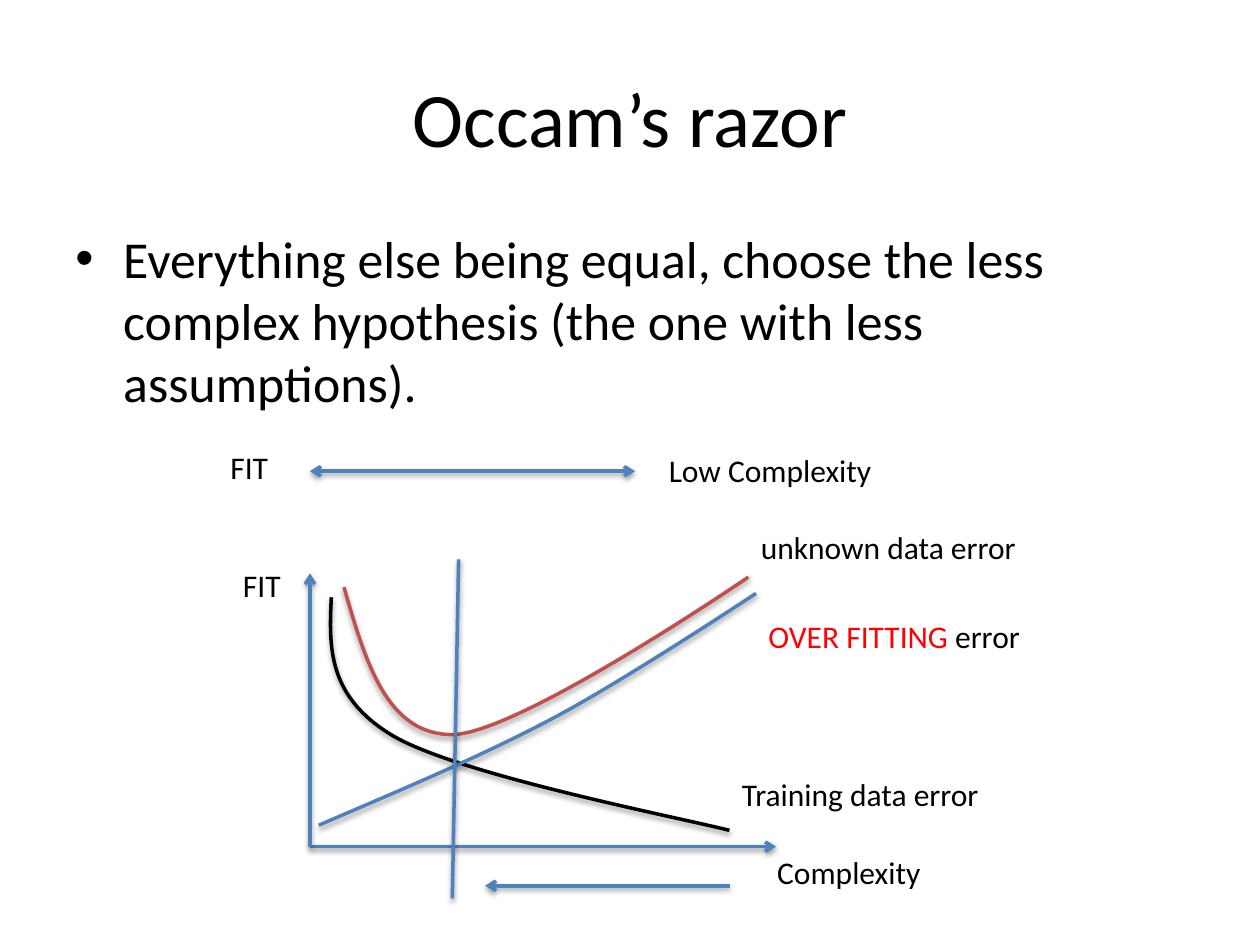
from dataclasses import dataclass

from lxml import etree
from pptx import Presentation
from pptx.dml.color import RGBColor
from pptx.enum.shapes import MSO_CONNECTOR
from pptx.enum.text import MSO_ANCHOR, MSO_AUTO_SIZE, PP_ALIGN
from pptx.oxml.ns import qn
from pptx.util import Inches, Pt

STRAIGHT = MSO_CONNECTOR.STRAIGHT
LEFT, CENTER = PP_ALIGN.LEFT, PP_ALIGN.CENTER
TOP, MIDDLE = MSO_ANCHOR.TOP, MSO_ANCHOR.MIDDLE
FIXED, GROW = MSO_AUTO_SIZE.NONE, MSO_AUTO_SIZE.SHAPE_TO_FIT_TEXT
FONT = "Calibri"
TITLE_ONLY = 5
COLORS = {"black": "000000", "blue": "4F81BD", "brick": "C0504D", "red": "FF0000"}

Point = tuple[float, float]


@dataclass(frozen=True)
class Label:
    left: float
    top: float
    width: float
    runs: tuple[tuple[str, str], ...]


@dataclass(frozen=True)
class Ruler:
    start: Point
    end: Point
    arrows: tuple[str, ...] = ("tailEnd",)


@dataclass(frozen=True)
class Curve:
    color: str
    start: Point
    segments: tuple[tuple[Point, Point, Point], ...]


ORIGIN = (2.46, 6.72)
DIAGRAM = (
    Label(1.73, 3.51, 0.51, (("FIT", "black"),)),
    Ruler((2.46, 3.74), (5.04, 3.74), ("headEnd", "tailEnd")),
    Label(5.21, 3.53, 1.83, (("Low Complexity", "black"),)),
    Ruler(ORIGIN, (6.16, 6.72)),
    Ruler(ORIGIN, (2.46, 4.55)),
    Label(6.07, 6.72, 1.35, (("Complexity", "black"),)),
    Label(1.83, 4.44, 0.51, (("FIT", "black"),)),
    Curve("black", (2.63, 4.74), (
        ((2.61, 5.14), (2.6, 5.53), (3.12, 5.84)),
        ((3.65, 6.15), (5.35, 6.48), (5.79, 6.59)),
    )),
    Curve("brick", (2.73, 4.66), (
        ((2.9, 5.25), (3.07, 5.84), (3.6, 5.83)),
        ((4.14, 5.81), (5.94, 4.58), (5.94, 4.58)),
    )),
    Label(5.79, 6.1, 2.13, (("Training data error", "black"),)),
    Label(5.94, 4.14, 2.26, (("unknown data error", "black"),)),
    Curve("blue", (2.53, 6.55), (
        ((3.18, 6.27), (3.83, 6), (4.41, 5.69)),
        ((4.99, 5.38), (6, 4.71), (6, 4.71)),
    )),
    Label(6, 4.85, 2.22, (("OVER FITTING", "red"), (" error", "black"))),
    Ruler((3.64, 4.44), (3.59, 7.13), ()),
    Ruler((5.79, 7.03), (3.85, 7.03)),
)


def write_text(frame, runs, *, size=18, align=LEFT, anchor=TOP,
               wrap=True, fit=FIXED) -> None:
    """Fill the frame's first paragraph with coloured runs."""
    frame.word_wrap = wrap
    frame.auto_size = fit
    frame.vertical_anchor = anchor
    paragraph = frame.paragraphs[0]
    paragraph.alignment = align
    for text, color in runs:
        run = paragraph.add_run()
        run.text = text
        run.font.name = FONT
        run.font.size = Pt(size)
        run.font.color.rgb = RGBColor.from_string(COLORS[color])


def place(shape, left: float, top: float, width: float, height: float) -> None:
    """Position and size a shape in inches."""
    shape.left, shape.top = Inches(left), Inches(top)
    shape.width, shape.height = Inches(width), Inches(height)


def add_bullet(paragraph) -> None:
    """Give the paragraph a hanging round bullet."""
    paragraph.space_before = Pt(6)
    properties = paragraph._p.get_or_add_pPr()
    properties.set("marL", str(Inches(0.38)))
    properties.set("indent", str(-Inches(0.38)))
    etree.SubElement(properties, qn("a:buFont"), typeface="Arial")
    etree.SubElement(properties, qn("a:buChar"), char="•")


def style_stroke(shape, color: str, arrows: tuple[str, ...] = ()) -> None:
    """Apply line colour, arrowheads and the soft drop shadow."""
    shape.line.width = Pt(2)
    shape.line.color.rgb = RGBColor.from_string(COLORS[color])
    stroke = shape.line._get_or_add_ln()
    for arrow in arrows:
        etree.SubElement(stroke, qn(f"a:{arrow}"), type="arrow")
    effects = etree.SubElement(shape._element.spPr, qn("a:effectLst"))
    shadow = etree.SubElement(
        effects, qn("a:outerShdw"), blurRad=str(Pt(3.1)), dist=str(Pt(1.6)),
        dir="5400000", rotWithShape="0",
    )
    tint = etree.SubElement(shadow, qn("a:srgbClr"), val=COLORS["black"])
    etree.SubElement(tint, qn("a:alpha"), val="38000")


def draw_ruler(slide, ruler: Ruler) -> None:
    """Draw one straight line of the diagram."""
    ends = [Inches(value) for value in (*ruler.start, *ruler.end)]
    style_stroke(slide.shapes.add_connector(STRAIGHT, *ends), "blue", ruler.arrows)


def draw_curve(slide, curve: Curve) -> None:
    """Draw one error curve as an open outline of cubic segments."""
    builder = slide.shapes.build_freeform(*(Inches(value) for value in curve.start))
    knots = [tuple(Inches(value) for value in segment[-1]) for segment in curve.segments]
    builder.add_line_segments(knots, close=False)
    outline = builder.convert_to_shape()
    sides = list(outline._element.iter(qn("a:lnTo")))
    for side, segment in zip(sides, curve.segments):
        cubic = etree.Element(qn("a:cubicBezTo"))
        for x, y in segment:
            etree.SubElement(cubic, qn("a:pt"), x=str(Inches(x) - outline.left),
                             y=str(Inches(y) - outline.top))
        side.getparent().replace(side, cubic)
    outline.fill.background()
    style_stroke(outline, curve.color)


def draw_label(slide, label: Label) -> None:
    """Draw one unwrapped caption."""
    caption = slide.shapes.add_textbox(0, 0, 0, 0)
    place(caption, label.left, label.top, label.width, 0.4)
    write_text(caption.text_frame, label.runs, wrap=False, fit=GROW)


def main() -> None:
    """Build the slide and save it."""
    deck = Presentation()
    deck.slide_width, deck.slide_height = Inches(10), Inches(7.5)
    slide = deck.slides.add_slide(deck.slide_layouts[TITLE_ONLY])

    title = slide.shapes.title
    place(title, 0.5, 0.3, 9, 1.25)
    write_text(title.text_frame, (("Occam’s razor", "black"),),
               size=44, align=CENTER, anchor=MIDDLE)

    principle = slide.shapes.add_textbox(0, 0, 0, 0)
    place(principle, 0.5, 1.75, 9, 1.42)
    statement = ("Everything else being equal, choose the less complex hypothesis "
                 "(the one with less assumptions).")
    write_text(principle.text_frame, ((statement, "black"),), size=29.6)
    add_bullet(principle.text_frame.paragraphs[0])

    painters = {Label: draw_label, Ruler: draw_ruler, Curve: draw_curve}
    for part in DIAGRAM:
        painters[type(part)](slide, part)

    deck.save("out.pptx")


if __name__ == "__main__":
    main()
